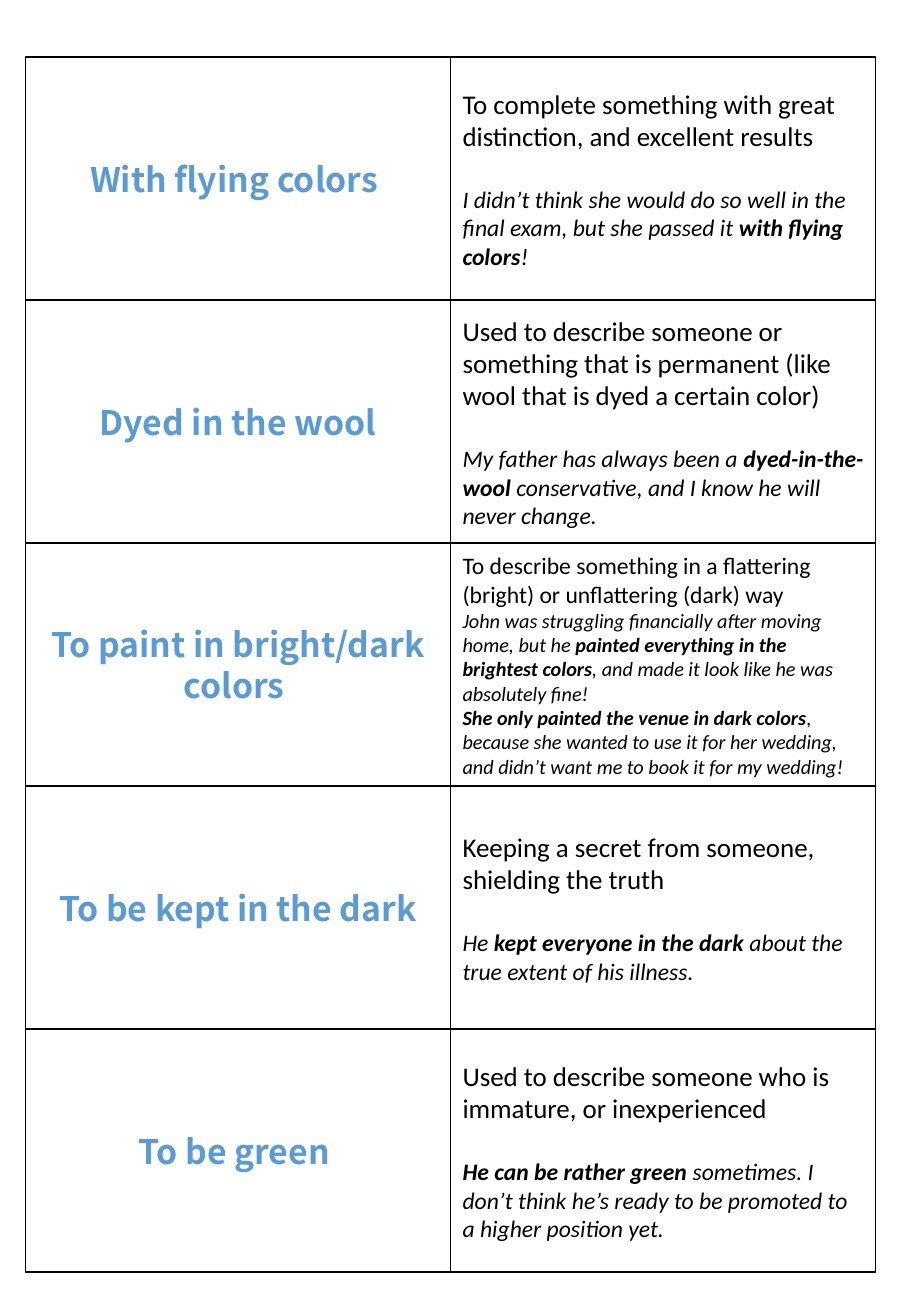
from dataclasses import dataclass

from pptx import Presentation
from pptx.dml.color import RGBColor
from pptx.enum.shapes import MSO_SHAPE
from pptx.enum.text import MSO_ANCHOR, PP_ALIGN
from pptx.util import Pt

RECT = MSO_SHAPE.RECTANGLE
MIDDLE = MSO_ANCHOR.MIDDLE
LEFT = PP_ALIGN.LEFT
CENTER = PP_ALIGN.CENTER

PX = 9144
PAGE_W, PAGE_H = 750, 1083
GRID_X, GRID_Y = 21, 47
CARD_W, CARD_H = 350, 200


@dataclass(frozen=True)
class Theme:
    paper: RGBColor = RGBColor(255, 255, 255)
    ink: RGBColor = RGBColor(0, 0, 0)
    blue: RGBColor = RGBColor(0x5B, 0x9B, 0xD5)
    head: str = "Noto Sans CJK KR"
    body: str = "Calibri"
    idiom: int = 20
    large: int = 16
    medium: int = 14
    small: int = 12
    border: int = 1
    gap: float = 19.5


THEME = Theme()

IDIOMS = [
    ("With flying colors ",
     "To complete something with great distinction, and excellent results",
     ["I didn’t think she would do so well in the final exam, "
      "but she passed it *with flying colors*!"]),
    ("Dyed in the wool",
     "Used to describe someone or something that is permanent "
     "(like wool that is dyed a certain color)",
     ["My father has always been a *dyed-in-the-wool* conservative, "
      "and I know he will never change."]),
    ("To paint in bright/dark colors ",
     "To describe something in a flattering (bright) or unflattering (dark) way",
     ["John was struggling financially after moving home, but he "
      "*painted everything in the brightest colors*, "
      "and made it look like he was absolutely fine!",
      "*She only painted the venue in dark colors*, "
      "because she wanted to use it for her wedding, "
      "and didn’t want me to book it for my wedding!"]),
    ("To be kept in the dark",
     "Keeping a secret from someone, shielding the truth",
     ["He *kept everyone in the dark* about the true extent of his illness."]),
    ("To be green ",
     "Used to describe someone who is immature, or inexperienced",
     ["*He can be rather green* sometimes. I don’t think he’s ready "
      "to be promoted to a higher position yet."]),
]


def add_card(slide, col, row):
    card = slide.shapes.add_shape(
        RECT, (GRID_X + col * CARD_W) * PX, (GRID_Y + row * CARD_H) * PX,
        CARD_W * PX, CARD_H * PX)
    card.shadow.inherit = False
    card.fill.solid()
    card.fill.fore_color.rgb = THEME.paper
    card.line.color.rgb = THEME.ink
    card.line.width = Pt(THEME.border)
    frame = card.text_frame
    frame.word_wrap = True
    frame.vertical_anchor = MIDDLE
    return frame


def style(para, size, name, color, align):
    para.alignment = align
    para.font.size = Pt(size)
    para.font.name = name
    para.font.color.rgb = color


def add_idiom(slide, row, idiom):
    para = add_card(slide, 0, row).paragraphs[0]
    para.text = idiom
    style(para, THEME.idiom, THEME.head, THEME.blue, CENTER)
    para.font.bold = True


def add_sample(frame, sample, size):
    para = frame.add_paragraph()
    style(para, size, THEME.body, THEME.ink, LEFT)
    para.font.italic = True
    for part, text in enumerate(sample.split("*")):
        if text:
            run = para.add_run()
            run.text = text
            run.font.bold = part % 2 == 1
    return para


def add_meaning(slide, row, meaning, samples):
    dense = len(samples) > 1
    frame = add_card(slide, 1, row)
    para = frame.paragraphs[0]
    para.text = meaning
    style(para, THEME.medium if dense else THEME.large,
          THEME.body, THEME.ink, LEFT)
    for sample in samples:
        para = add_sample(frame, sample, THEME.small if dense else THEME.medium)
        if not dense:
            para.space_before = Pt(THEME.gap)


def main():
    deck = Presentation()
    deck.slide_width = PAGE_W * PX
    deck.slide_height = PAGE_H * PX
    slide = deck.slides.add_slide(deck.slide_layouts[6])
    for row, (idiom, meaning, samples) in enumerate(IDIOMS):
        add_idiom(slide, row, idiom)
        add_meaning(slide, row, meaning, samples)
    deck.save("out.pptx")


if __name__ == "__main__":
    main()
